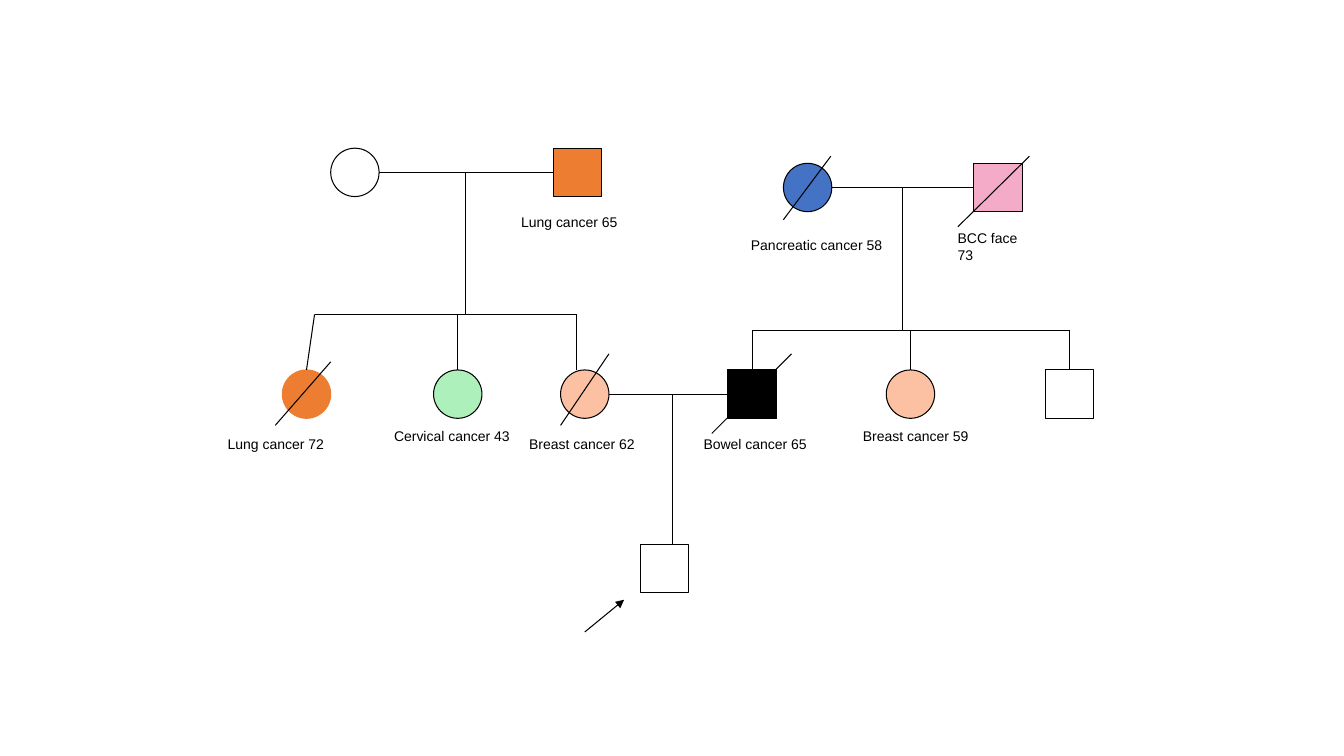
import pptx
import pptx.util
import pptx.dml.color
import pptx.enum.shapes
import pptx.enum.text
import pptx.oxml.ns
import lxml.etree

PX = 9144  # 100 px to the inch
SIZE = 48  # symbol width and height
HALF = SIZE // 2
TOP, LEFT = 0, 1  # connection sites of a square
KINDS = pptx.enum.shapes.MSO_SHAPE


class Theme:
    ink = "000000"
    lung = "ED7D31"
    breast = "FCC0A2"
    cervix = "AEF0BC"
    bowel = "000000"
    skin = "F3ABC8"
    pancreas = "4472C4"
    font = "Arial"
    text = 10
    line = 0.75


def px(n):
    return pptx.util.Emu(n * PX)


def rgb(code):
    return pptx.dml.color.RGBColor.from_string(code)


def add_sign(slide, kind, x, y, fill=None, edge=Theme.ink):
    """Draw a family member centred on x, y."""
    sign = slide.shapes.add_shape(
        kind, px(x - HALF), px(y - HALF), px(SIZE), px(SIZE))
    sign.shadow.inherit = False
    if fill:
        sign.fill.solid()
        sign.fill.fore_color.rgb = rgb(fill)
    else:
        sign.fill.background()
    sign.line.color.rgb = rgb(edge)
    sign.line.width = pptx.util.Pt(Theme.line)
    return sign


def add_line(slide, x1, y1, x2, y2, end=None, site=TOP, arrow=False):
    """Draw a straight line, joined to a square if one is given."""
    line = slide.shapes.add_connector(
        pptx.enum.shapes.MSO_CONNECTOR.STRAIGHT,
        px(x1), px(y1), px(x2), px(y2))
    line.line.color.rgb = rgb(Theme.ink)
    line.line.width = pptx.util.Pt(Theme.line)
    if end is not None:
        line.end_connect(end, site)
    if arrow:
        tail = lxml.etree.SubElement(
            line.line._get_or_add_ln(), pptx.oxml.ns.qn("a:tailEnd"))
        tail.set("type", "triangle")
    lxml.etree.SubElement(
        line._element.spPr, pptx.oxml.ns.qn("a:effectLst"))


def add_label(slide, text, x, y, width):
    box = slide.shapes.add_textbox(px(x), px(y), px(width), px(27))
    frame = box.text_frame
    frame.word_wrap = False
    frame.auto_size = pptx.enum.text.MSO_AUTO_SIZE.SHAPE_TO_FIT_TEXT
    frame.text = text
    font = frame.paragraphs[0].runs[0].font
    font.name = Theme.font
    font.size = pptx.util.Pt(Theme.text)
    font.color.rgb = rgb(Theme.ink)


def add_brood(slide, stem, top, bar, drops):
    """Draw the stem from a couple, the bar and a drop to each child."""
    add_line(slide, stem, top, stem, bar)
    add_line(slide, drops[0][0], bar, drops[-1][0], bar)
    for start, x, y, child in drops:
        add_line(slide, start, bar, x, y, child)


def main():
    deck = pptx.Presentation()
    deck.slide_width, deck.slide_height = px(1333), px(750)
    slide = deck.slides.add_slide(deck.slide_layouts[6])
    oval, square = KINDS.OVAL, KINDS.RECTANGLE
    left, right, mid = 171, 186, 391  # row centres
    top = mid - HALF

    # Grandparents
    add_sign(slide, oval, 352, left)
    lung = add_sign(slide, square, 573, left, Theme.lung)
    add_sign(slide, oval, 801, right, Theme.pancreas)
    skin = add_sign(slide, square, 990, right, Theme.skin)

    # Parents, aunts and uncle
    add_sign(slide, oval, 304, mid, Theme.lung, Theme.lung)
    add_sign(slide, oval, 454, mid, Theme.cervix)
    add_sign(slide, oval, 580, mid, Theme.breast)
    bowel = add_sign(slide, square, 746, mid, Theme.bowel)
    add_sign(slide, oval, 903, mid, Theme.breast)
    uncle = add_sign(slide, square, 1061, mid)

    # Index patient with arrow
    add_sign(slide, square, 659, 564)
    add_line(slide, 580, 627, 619, 595, arrow=True)

    # Couples
    add_line(slide, 376, left, 549, left, lung, LEFT)
    add_line(slide, 825, right, 966, right, skin, LEFT)
    add_line(slide, 604, mid, 722, mid, bowel, LEFT)

    # Descent
    add_brood(slide, 462, left, 312, [
        (312, 304, top, None), (454, 454, top, None), (572, 572, top, None)])
    add_brood(slide, 895, right, 328, [
        (746, 746, top, bowel), (903, 903, top, None),
        (1061, 1061, top, uncle)])
    add_line(slide, 667, mid, 667, 540)

    # Strokes through the deceased
    for stroke in [
        (328, 359, 273, 422),
        (604, 351, 556, 422),
        (785, 351, 706, 430),
        (824, 155, 777, 218),
        (1021, 155, 950, 225),
    ]:
        add_line(slide, *stroke)

    # Diagnoses with age
    for label in [
        ("Lung cancer 65", 507, 207, 119),
        ("Pancreatic cancer 58", 735, 230, 154),
        ("BCC face 73", 940, 223, 98),
        ("Lung cancer 72", 216, 427, 119),
        ("Cervical cancer 43", 381, 419, 139),
        ("Breast cancer 62", 515, 427, 128),
        ("Bowel cancer 65", 688, 427, 126),
        ("Breast cancer 59", 846, 419, 128),
    ]:
        add_label(slide, *label)

    deck.save("out.pptx")


if __name__ == "__main__":
    main()
